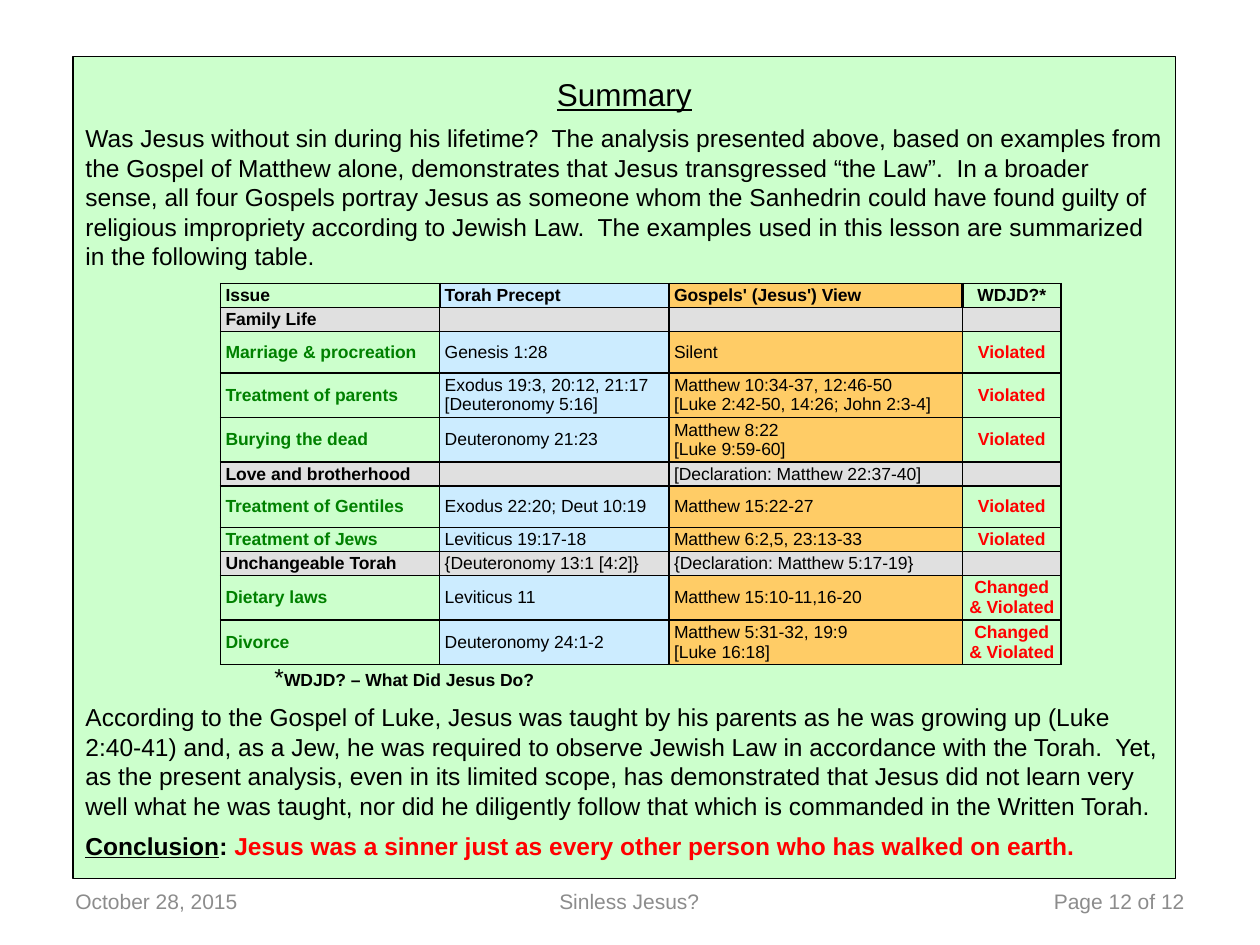
from typing import NamedTuple

from lxml.etree import SubElement
from pptx import Presentation
from pptx.dml.color import RGBColor
from pptx.enum.shapes import MSO_SHAPE as Shape
from pptx.enum.text import MSO_ANCHOR as Anchor, PP_ALIGN as Align
from pptx.oxml.ns import qn
from pptx.util import Inches, Pt

BLACK, RED, DARK_GREEN, GRAY = "000000", "FF0000", "008000", "8C8C8C"
GREEN, BLUE, ORANGE, SECTION_GRAY = "CCFFCC", "CCECFF", "FFCC66", "E0E0E0"
COLUMN_FILLS = (GREEN, BLUE, ORANGE, GREEN)
COLUMN_WIDTHS = (1.74, 1.82, 2.33, 0.78)


class Run(NamedTuple):
    text: str
    size: float = 14
    bold: bool = False
    underline: bool = False
    color: str = BLACK


class Block(NamedTuple):
    runs: tuple[Run, ...]
    before: float = 6
    align: Align = Align.LEFT
    indent: float = 0


class Row(NamedTuple):
    kind: str
    height: float
    texts: tuple[str, str, str, str]


class Footer(NamedTuple):
    text: str
    left: float
    width: float
    align: Align


BLOCKS = (
    Block((Run("Summary", 18, underline=True),), 0, Align.CENTER),
    Block((Run(
        "Was Jesus without sin during his lifetime?  The analysis presented above, based on "
        "examples from the Gospel of Matthew alone, demonstrates that Jesus transgressed “the "
        "Law”.  In a broader sense, all four Gospels portray Jesus as someone whom the Sanhedrin "
        "could have found guilty of religious impropriety according to Jewish Law.  The examples "
        "used in this lesson are summarized in the following table."),)),
    Block((Run("*"), Run("WDJD? – What Did Jesus Do?", 10, True)), 224, indent=1.5),
    Block((Run(
        "According to the Gospel of Luke, Jesus was taught by his parents as he was growing up "
        "(Luke 2:40-41) and, as a Jew, he was required to observe Jewish Law in accordance with "
        "the Torah.  Yet, as the present analysis, even in its limited scope, has demonstrated "
        "that Jesus did not learn very well what he was taught, nor did he diligently follow that "
        "which is commanded in the Written Torah."),)),
    Block((
        Run("Conclusion", bold=True, underline=True),
        Run(": ", bold=True),
        Run("Jesus was a sinner just as every other person who has walked on earth.",
            bold=True, color=RED))),
)

ROWS = (
    Row("header", 0.19, ("Issue", "Torah Precept", "Gospels' (Jesus') View", "WDJD?*")),
    Row("section", 0.19, ("Family Life", "", "", "")),
    Row("item", 0.33, ("Marriage & procreation", "Genesis 1:28", "Silent", "Violated")),
    Row("item", 0.35, ("Treatment of parents", "Exodus 19:3, 20:12, 21:17 [Deuteronomy 5:16]",
                       "Matthew 10:34-37, 12:46-50\n[Luke 2:42-50, 14:26; John 2:3-4]", "Violated")),
    Row("item", 0.35, ("Burying the dead", "Deuteronomy 21:23",
                       "Matthew 8:22\n[Luke 9:59-60]", "Violated")),
    Row("section", 0.19, ("Love and brotherhood", "", "[Declaration: Matthew 22:37-40]", "")),
    Row("item", 0.33, ("Treatment of Gentiles", "Exodus 22:20; Deut 10:19",
                       "Matthew 15:22-27", "Violated")),
    Row("item", 0.19, ("Treatment of Jews", "Leviticus 19:17-18",
                       "Matthew 6:2,5, 23:13-33", "Violated")),
    Row("section", 0.19, ("Unchangeable Torah", "{Deuteronomy 13:1 [4:2]}",
                          "{Declaration: Matthew 5:17-19}", "")),
    Row("item", 0.35, ("Dietary laws", "Leviticus 11", "Matthew 15:10-11,16-20",
                       "Changed & Violated")),
    Row("item", 0.35, ("Divorce", "Deuteronomy 24:1-2",
                       "Matthew 5:31-32, 19:9\n[Luke 16:18]", "Changed & Violated")),
)

FOOTERS = (
    Footer("October 28, 2015", 0.5, 2.33, Align.LEFT),
    Footer("Sinless Jesus?", 2.83, 4.33, Align.CENTER),
    Footer("Page 12 of 12", 7.17, 2.33, Align.RIGHT),
)


def rgb(color: str) -> RGBColor:
    return RGBColor.from_string(color)


def set_font(font, size: float, color: str, bold: bool = False) -> None:
    font.name = "Arial"
    font.size = Pt(size)
    font.bold = bold
    font.color.rgb = rgb(color)


def add_footer(slide, footer: Footer) -> None:
    box = slide.shapes.add_textbox(
        Inches(footer.left), Inches(6.95), Inches(footer.width), Inches(0.4))
    frame = box.text_frame
    frame.word_wrap = True
    frame.vertical_anchor = Anchor.MIDDLE
    paragraph = frame.paragraphs[0]
    paragraph.text = footer.text
    paragraph.alignment = footer.align
    set_font(paragraph.font, 12, GRAY)


def add_block(paragraph, block: Block) -> None:
    paragraph.alignment = block.align
    paragraph.space_before = Pt(block.before)
    if block.indent:
        paragraph._p.get_or_add_pPr().set("marL", str(Inches(block.indent)))
    for item in block.runs:
        run = paragraph.add_run()
        run.text = item.text
        set_font(run.font, item.size, item.color, item.bold)
        run.font.underline = item.underline


def add_panel(slide) -> None:
    panel = slide.shapes.add_shape(
        Shape.RECTANGLE, Inches(0.58), Inches(0.45), Inches(8.75), Inches(6.52))
    panel.shadow.inherit = False
    panel.fill.solid()
    panel.fill.fore_color.rgb = rgb(GREEN)
    panel.line.color.rgb = rgb(BLACK)
    panel.line.width = Pt(0.75)
    frame = panel.text_frame
    frame.word_wrap = True
    frame.vertical_anchor = Anchor.MIDDLE
    for index, block in enumerate(BLOCKS):
        add_block(frame.add_paragraph() if index else frame.paragraphs[0], block)


def set_borders(cell, widths: dict[str, float]) -> None:
    properties = cell._tc.get_or_add_tcPr()
    for side, width in widths.items():
        line = SubElement(properties, qn(f"a:ln{side}"), w=str(Pt(width)))
        SubElement(SubElement(line, qn("a:solidFill")), qn("a:srgbClr"), val=BLACK)


def fill_cell(cell, row: Row, column: int) -> None:
    header = row.kind == "header"
    set_borders(cell, {
        "L": 1.5 if header and column > 0 else 1,
        "R": 1.5 if header and column < 3 else 1,
        "T": 1,
        "B": 1,
    })
    cell.fill.solid()
    cell.fill.fore_color.rgb = rgb(SECTION_GRAY if row.kind == "section" else COLUMN_FILLS[column])
    cell.vertical_anchor = Anchor.MIDDLE
    cell.margin_left = cell.margin_right = Inches(0.04)
    cell.margin_top = cell.margin_bottom = Inches(0.01)
    cell.text = row.texts[column]
    color = {0: DARK_GREEN, 3: RED}.get(column, BLACK) if row.kind == "item" else BLACK
    for paragraph in cell.text_frame.paragraphs:
        paragraph.alignment = Align.CENTER if column == 3 else Align.LEFT
        set_font(paragraph.font, 10, color, header or column in (0, 3))


def add_summary_table(slide) -> None:
    frame = slide.shapes.add_table(
        len(ROWS), len(COLUMN_WIDTHS), Inches(1.75), Inches(2.25),
        Inches(sum(COLUMN_WIDTHS)), Inches(sum(row.height for row in ROWS)))
    table = frame.table
    for column, width in zip(table.columns, COLUMN_WIDTHS):
        column.width = Inches(width)
    for index, row in enumerate(ROWS):
        table.rows[index].height = Inches(row.height)
        for column in range(len(COLUMN_WIDTHS)):
            fill_cell(table.cell(index, column), row, column)


def main() -> None:
    presentation = Presentation()
    presentation.slide_width, presentation.slide_height = Inches(10), Inches(7.5)
    slide = presentation.slides.add_slide(presentation.slide_layouts[6])
    for footer in FOOTERS:
        add_footer(slide, footer)
    add_panel(slide)
    add_summary_table(slide)
    presentation.save("out.pptx")


if __name__ == "__main__":
    main()
